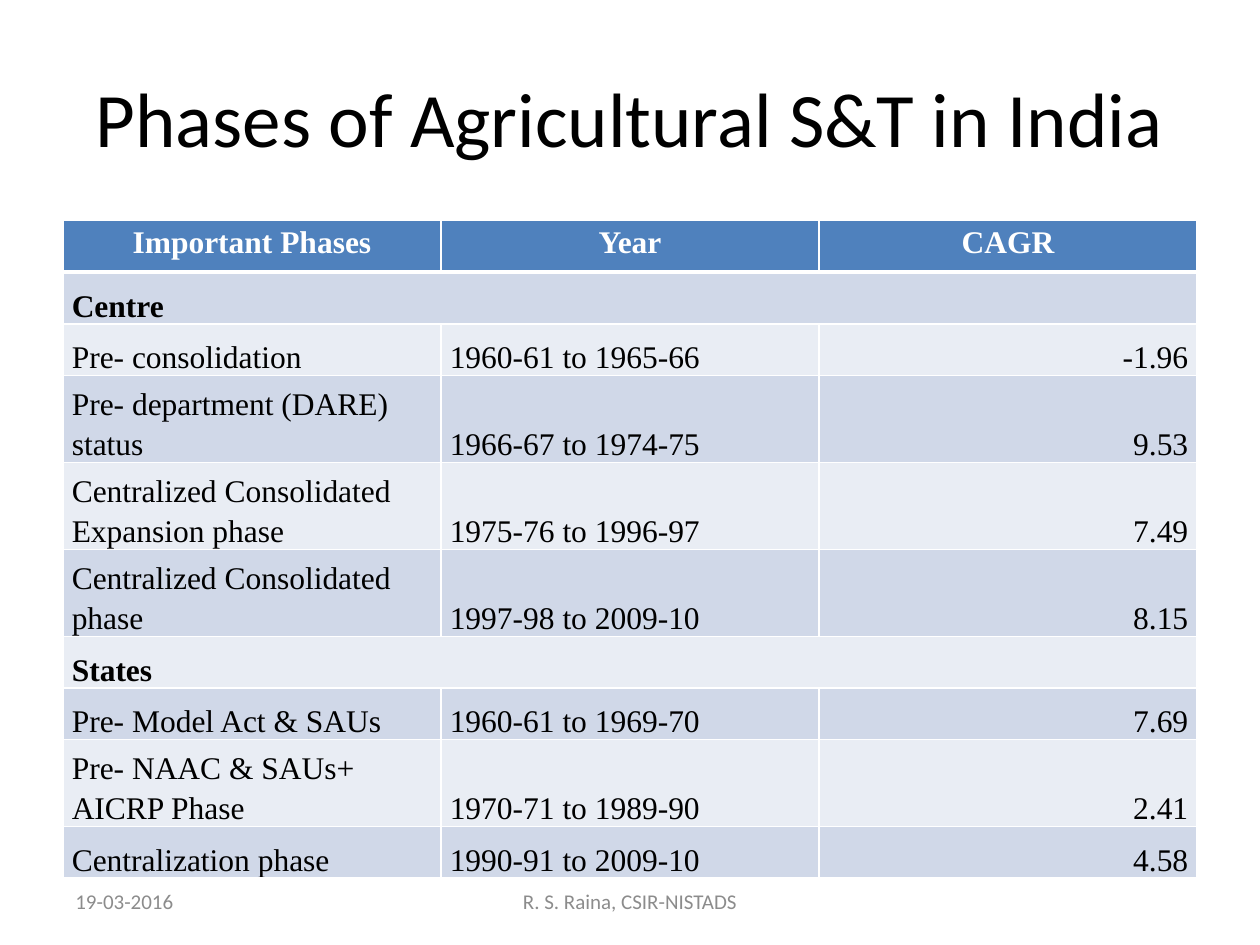
from lxml.etree import SubElement as Sub
from pptx import Presentation
from pptx.dml.color import RGBColor
from pptx.enum.text import MSO_ANCHOR as Anchor, PP_ALIGN as Align
from pptx.oxml.ns import qn
from pptx.util import Inches, Pt

BLACK = RGBColor(0x00, 0x00, 0x00)
WHITE = RGBColor(0xFF, 0xFF, 0xFF)
GRAY = RGBColor(0x8C, 0x8C, 0x8C)
BLUE = RGBColor(0x4F, 0x81, 0xBD)
BANDS = [RGBColor(0xE9, 0xED, 0xF4), RGBColor(0xD0, 0xD8, 0xE8)]

ROWS = [
    ("Important Phases", "Year", "CAGR"),
    ("Centre",),
    ("Pre- consolidation", "1960-61 to 1965-66", "-1.96"),
    ("Pre- department (DARE) status", "1966-67 to 1974-75", "9.53"),
    ("Centralized Consolidated Expansion phase", "1975-76 to 1996-97", "7.49"),
    ("Centralized Consolidated phase", "1997-98 to 2009-10", "8.15"),
    ("States",),
    ("Pre- Model Act & SAUs", "1960-61 to 1969-70", "7.69"),
    ("Pre- NAAC & SAUs+ AICRP Phase", "1970-71 to 1989-90", "2.41"),
    ("Centralization phase", "1990-91 to 2009-10", "4.58"),
]
SIDES = [Align.LEFT, Align.LEFT, Align.RIGHT]
PADS = {
    "margin_left": Inches(0.07), "margin_right": Inches(0.07),
    "margin_top": 0, "margin_bottom": 0,
}


def apply(item, style):
    """Set each attribute in style on item."""
    for name, value in style.items():
        setattr(item, name, value)


def write(frame, text, font, color, para):
    """Put one styled paragraph into a text frame."""
    line = frame.paragraphs[0]
    apply(line, para)
    run = line.add_run()
    run.text = text
    apply(run.font, font)
    run.font.color.rgb = color


def add_label(slide, box, text, size, color, align):
    """Place a line of text, centred vertically in its box."""
    frame = slide.shapes.add_textbox(*map(Inches, box)).text_frame
    apply(frame, {"word_wrap": True, "vertical_anchor": Anchor.MIDDLE})
    font = {"name": "Calibri", "size": Pt(size)}
    write(frame, text, font, color, {"alignment": align})


def add_edges(cell, top, base):
    """Draw white cell borders with the given top and base widths."""
    props = cell._tc.get_or_add_tcPr()
    for side, width in zip("LRTB", (1, 1, top, base)):
        line = Sub(props, qn(f"a:ln{side}"), w=str(Pt(width)))
        Sub(Sub(line, qn("a:solidFill")), qn("a:srgbClr"), val=str(WHITE))


def fill_cell(cell, text, row, side, bold):
    """Style and fill one table cell by its row."""
    head = row == 0
    add_edges(cell, 3 if row == 1 else 1, 3 if head else 1)
    cell.fill.solid()
    cell.fill.fore_color.rgb = BLUE if head else BANDS[row % 2]
    anchor = Anchor.TOP if head else Anchor.BOTTOM
    apply(cell, {**PADS, "vertical_anchor": anchor})
    font = {"name": "Times New Roman", "size": Pt(18), "bold": bold}
    para = {"alignment": Align.CENTER if head else side, "line_spacing": 1.15}
    write(cell.text_frame, text, font, WHITE if head else BLACK, para)


def add_phases(slide, box):
    """Place the table of phases, merging the section rows."""
    left, top, width, height = map(Inches, box)
    count = len(SIDES)
    table = slide.shapes.add_table(
        len(ROWS), count, left, top, width, height).table
    for row, texts in enumerate(ROWS):
        section = len(texts) == 1
        if section:
            table.cell(row, 0).merge(table.cell(row, count - 1))
        for col, text in enumerate(texts):
            fill_cell(table.cell(row, col), text, row, SIDES[col],
                      section or row == 0)


def add_footer(slide, box):
    """Place the date at the left and the author in the middle."""
    left, top, width, height = box
    mid = 3.17
    add_label(slide, (left, top, 2.33, height), "19-03-2016",
              12, GRAY, Align.LEFT)
    add_label(slide, (left + (width - mid) / 2, top, mid, height),
              "R. S. Raina, CSIR-NISTADS", 12, GRAY, Align.CENTER)


def main():
    """Build and save the slide."""
    deck = Presentation()
    apply(deck, {"slide_width": Inches(10), "slide_height": Inches(7.5)})
    slide = deck.slides.add_slide(deck.slide_layouts[6])
    add_label(slide, (0.5, 0.3, 9, 1.25),
              "Phases of Agricultural S&T in India", 44, BLACK, Align.CENTER)
    add_phases(slide, (0.5, 1.75, 9, 4.1))
    add_footer(slide, (0.5, 6.95, 9, 0.4))
    deck.save("out.pptx")


if __name__ == "__main__":
    main()
